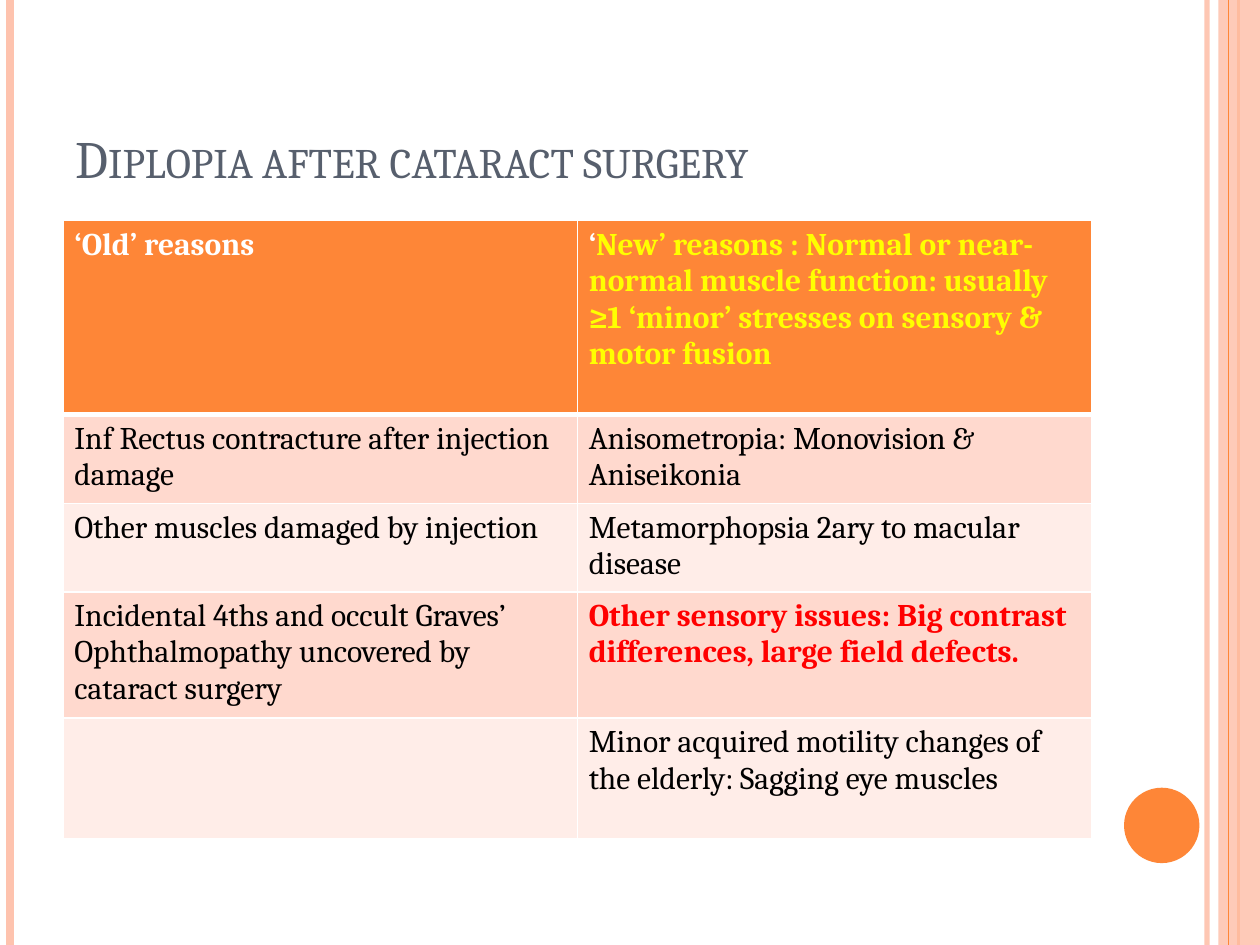
from pptx import Presentation
from pptx.dml.color import RGBColor
from pptx.enum.shapes import MSO_CONNECTOR, MSO_SHAPE
from pptx.enum.text import MSO_ANCHOR
from pptx.oxml.ns import qn
from pptx.util import Cm, Pt
from lxml.etree import SubElement

HUES = {
    "white": "FFFFFF", "black": "000000", "slate": "575F6D",
    "orange": "FE8637", "peach": "FEC3AE", "yellow": "FFFF00",
    "red": "FF0000", "band": "FFD9CE", "pale": "FFEDE8",
}
FONT = "Cambria"
WIDE, HIGH = 25.4, 19.05

# Content: each cell is a list of (text, colour, bold) runs
TITLE = "Diplopia after cataract surgery"
ROWS = [
    ([("‘Old’ reasons", "white", True)],
     [("‘", "white", True),
      ("New’ reasons : Normal or near- normal muscle function: usually "
       "≥1 ‘minor’ stresses on sensory & motor fusion", "yellow", True)]),
    ([("Inf Rectus contracture after injection damage", "black", False)],
     [("Anisometropia: Monovision & Aniseikonia", "black", False)]),
    ([("Other muscles damaged by injection", "black", False)],
     [("Metamorphopsia 2ary to macular disease", "black", False)]),
    ([("Incidental 4ths and occult Graves’ Ophthalmopathy uncovered by "
       "cataract surgery", "black", False)],
     [("Other sensory issues: Big contrast differences, large field defects.",
       "red", True)]),
    ([],
     [("Minor acquired motility changes of the elderly: Sagging eye muscles",
       "black", False)]),
]
TALL = [3.91, 1.72, 1.72, 2.46, 2.43]

# Side rules: x, colour, points, opacity in percent
LEFT = [(24.33, "peach", 3, 93), (0.2, "peach", 4.5, 100),
        (24.97, "orange", 1.5, 100)]
RIGHT = [(24.77, "orange", 0.75, 100)]


def tint(name):
    return RGBColor.from_string(HUES[name])


def fade(node, pct):
    if pct < 100:
        hue = next(node.iter(qn("a:srgbClr")))
        SubElement(hue, qn("a:alpha"), val=str(pct * 1000))


def write(para, text, size=18, hue="black", bold=False, caps=False):
    run = para.add_run()
    run.text = text
    font = run.font
    font.name, font.size, font.bold = FONT, Pt(size), bold
    font.color.rgb = tint(hue)
    if caps:
        run._r.get_or_add_rPr().set("cap", "small")


def rule(shapes, x, hue, width, pct):
    line = shapes.add_connector(MSO_CONNECTOR.STRAIGHT,
                                Cm(x), Cm(0), Cm(x), Cm(HIGH))
    line.line.color.rgb = tint(hue)
    line.line.width = Pt(width)
    props = line._element.spPr
    fade(props, pct)
    SubElement(props, qn("a:effectLst"))


def block(shapes, kind, box, hue, pct=100):
    shape = shapes.add_shape(kind, *map(Cm, box))
    shape.shadow.inherit = False
    shape.fill.solid()
    shape.fill.fore_color.rgb = tint(hue)
    shape.line.fill.background()
    fade(shape._element.spPr, pct)


def edge(cell, top, base):
    props = cell._tc.get_or_add_tcPr()
    sides = (("lnL", 1), ("lnR", 1), ("lnT", top), ("lnB", base))
    for spot, (side, width) in enumerate(sides):
        line = SubElement(props, qn("a:" + side), w=str(Pt(width)))
        fill = SubElement(line, qn("a:solidFill"))
        SubElement(fill, qn("a:srgbClr"), val=HUES["white"])
        props.insert(spot, line)


deck = Presentation()
deck.slide_width, deck.slide_height = Cm(WIDE), Cm(HIGH)
slide = deck.slides.add_slide(deck.slide_layouts[6])
shapes = slide.shapes

# Side decoration
for item in LEFT:
    rule(shapes, *item)
block(shapes, MSO_SHAPE.RECTANGLE, (24.56, 0, 0.84, HIGH), "peach", 87)
for item in RIGHT:
    rule(shapes, *item)
block(shapes, MSO_SHAPE.OVAL, (22.66, 15.88, 1.52, 1.52), "orange")

# Title
frame = shapes.add_textbox(Cm(1.27), Cm(0.76), Cm(20.75), Cm(3.18)).text_frame
frame.word_wrap = True
frame.vertical_anchor = MSO_ANCHOR.BOTTOM
write(frame.paragraphs[0], TITLE, size=30, hue="slate", caps=True)

# Table of reasons
table = shapes.add_table(len(ROWS), 2, Cm(1.27), Cm(4.45),
                         Cm(20.74), Cm(sum(TALL))).table
for col in table.columns:
    col.width = Cm(10.37)
for r, (cells, tall) in enumerate(zip(ROWS, TALL)):
    table.rows[r].height = Cm(tall)
    back = "orange" if r == 0 else ("pale", "band")[r % 2]
    for c, runs in enumerate(cells):
        cell = table.cell(r, c)
        cell.margin_left = cell.margin_right = Cm(0.23)
        cell.margin_top = cell.margin_bottom = Cm(0.13)
        cell.fill.solid()
        cell.fill.fore_color.rgb = tint(back)
        edge(cell, 3 if r == 1 else 1, 3 if r == 0 else 1)
        for text, hue, bold in runs:
            write(cell.text_frame.paragraphs[0], text, hue=hue, bold=bold)

deck.save("out.pptx")
